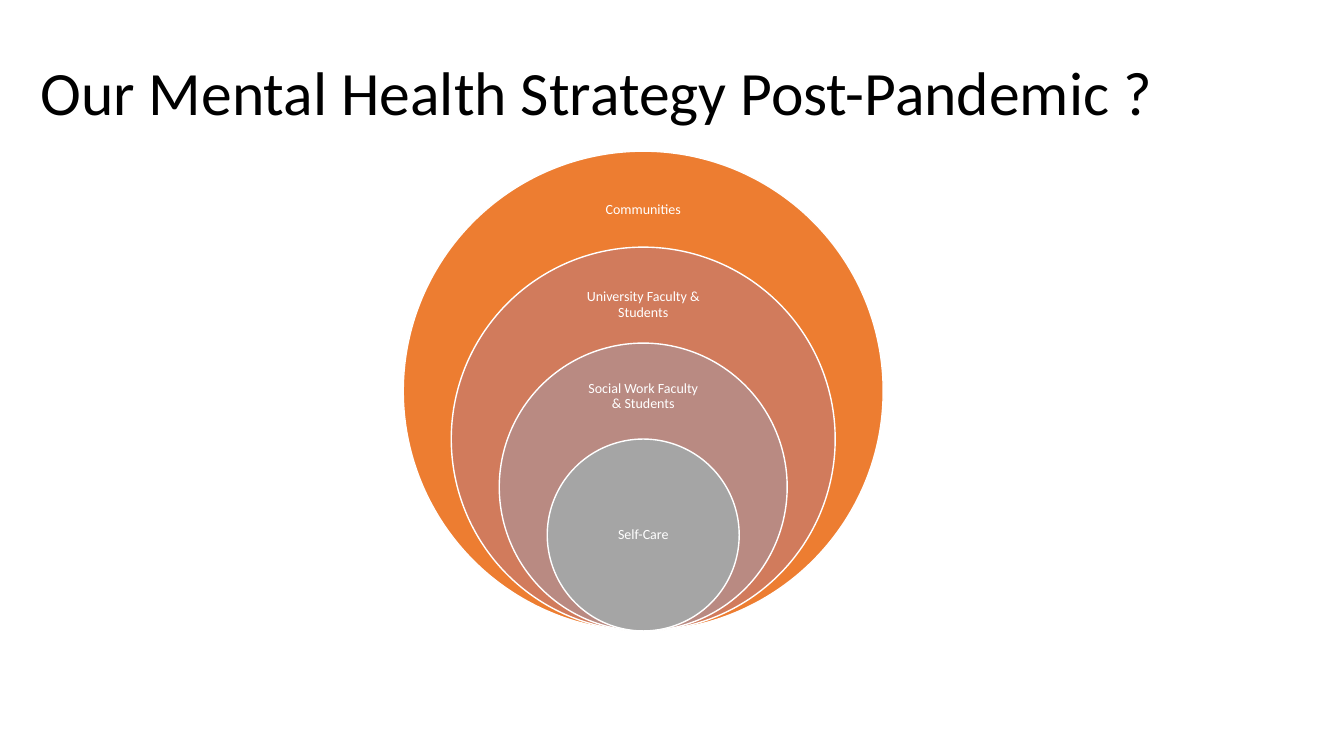
from pptx import Presentation
from pptx.dml.color import RGBColor
from pptx.enum.shapes import MSO_SHAPE as Shape
from pptx.enum.text import MSO_ANCHOR as Anchor, PP_ALIGN as Align
from pptx.util import Pt

PX = 9144  # EMU per px, 100 px to the inch
FONT = "Calibri"

CENTER_X, BASE_Y, OUTER = 638, 626, 476

# label, diameter in fifths of the outer circle, fill, label top, width, height
LEVELS = [
    ("Communities", 5, "ED7D31", 173, 133, 71),
    ("University Faculty & Students", 4, "D17B5C", 268, 133, 69),
    ("Social Work Faculty & Students", 3, "B98A82", 361, 133, 64),
    ("Self-Care", 2, "A5A5A5", 483, 135, 95),
]


def px(*lengths):
    return [round(length * PX) for length in lengths]


def color(hex_code):
    return RGBColor.from_string(hex_code)


def style_paragraph(paragraph, size, hex_code, align):
    paragraph.alignment = align
    paragraph.line_spacing = 0.9
    paragraph.font.name = FONT
    paragraph.font.size = Pt(size)
    paragraph.font.color.rgb = color(hex_code)


def set_title(slide, wording):
    title = slide.shapes.title
    title.left, title.top, title.width, title.height = px(30, 40, 1274, 110)
    title.text_frame.text = wording
    title.text_frame.vertical_anchor = Anchor.MIDDLE
    style_paragraph(title.text_frame.paragraphs[0], 44, "000000", Align.LEFT)


def add_circle(slide, diameter, fill):
    left, top = CENTER_X - diameter / 2, BASE_Y - diameter
    circle = slide.shapes.add_shape(
        Shape.OVAL, *px(left, top, diameter, diameter))
    circle.shadow.inherit = False
    circle.fill.solid()
    circle.fill.fore_color.rgb = color(fill)
    circle.line.color.rgb = color("FFFFFF")
    circle.line.width = Pt(1)


def add_label(slide, wording, top, width, height):
    label = slide.shapes.add_textbox(
        *px(CENTER_X - width / 2, top, width, height))
    frame = label.text_frame
    frame.word_wrap = True
    frame.vertical_anchor = Anchor.MIDDLE
    (frame.margin_left, frame.margin_top,
     frame.margin_right, frame.margin_bottom) = px(8, 8, 8, 8)
    frame.text = wording
    style_paragraph(frame.paragraphs[0], 10, "FFFFFF", Align.CENTER)


def main():
    deck = Presentation()
    deck.slide_width, deck.slide_height = px(1333, 750)
    slide = deck.slides.add_slide(deck.slide_layouts[5])

    # Title
    set_title(slide, "Our Mental Health Strategy Post-Pandemic ?")

    # Nested circles that share their lowest point
    for wording, fifths, fill, top, width, height in LEVELS:
        add_circle(slide, OUTER * fifths / 5, fill)
        add_label(slide, wording, top, width, height)

    deck.save("out.pptx")


if __name__ == "__main__":
    main()
